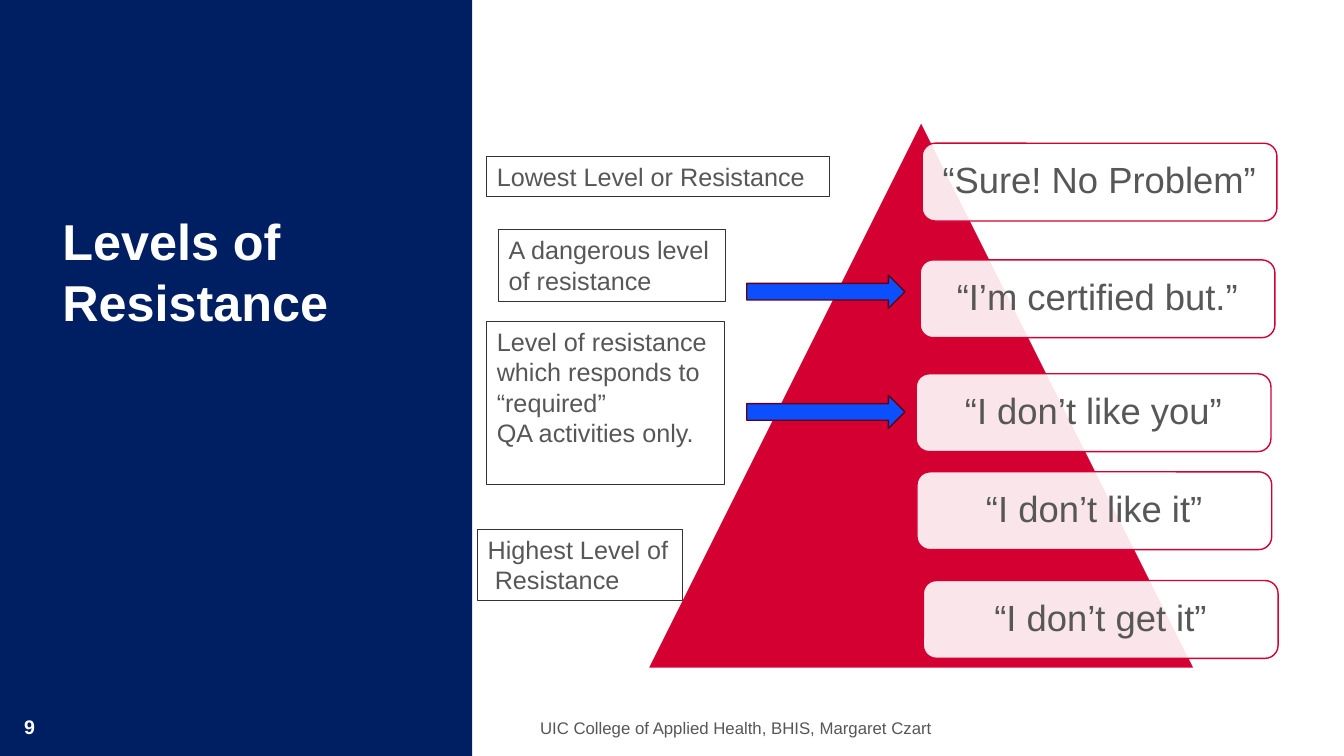
from dataclasses import dataclass

import pptx
import pptx.dml.color
import pptx.enum.shapes
import pptx.enum.text
import pptx.oxml
import pptx.oxml.ns
import pptx.util

Cm = pptx.util.Cm
Pt = pptx.util.Pt
RGBColor = pptx.dml.color.RGBColor
MSO_SHAPE = pptx.enum.shapes.MSO_SHAPE
PP_ALIGN = pptx.enum.text.PP_ALIGN
MSO_ANCHOR = pptx.enum.text.MSO_ANCHOR

NAVY = RGBColor(0x00, 0x1E, 0x62)
WHITE = RGBColor(0xFF, 0xFF, 0xFF)
RED = RGBColor(0xD4, 0x00, 0x32)
MAROON = RGBColor(0x5D, 0x00, 0x16)
BLUE = RGBColor(0x0C, 0x4F, 0xFF)
GREY = RGBColor(0x57, 0x57, 0x57)
CHARCOAL = RGBColor(0x32, 0x32, 0x32)
FONT = "Arial"


@dataclass(frozen=True)
class Box:
    left: float
    top: float
    width: float
    height: float

    def lengths(self) -> list[int]:
        return [Cm(v) for v in (self.left, self.top, self.width, self.height)]


@dataclass(frozen=True)
class Note:
    box: Box
    text: str
    last_indent: float = 0


@dataclass(frozen=True)
class Quote:
    left: float
    top: float
    text: str


NOTES = [
    Note(Box(12.27, 3.94, 8.64, 1.02), "Lowest Level or Resistance"),
    Note(Box(12.04, 13.34, 5.16, 1.8), "Highest Level of\nResistance", 0.18),
    Note(Box(12.57, 5.79, 5.72, 1.8), "A dangerous level\nof resistance"),
    Note(Box(12.27, 8.1, 5.99, 4.11),
         "Level of resistance which responds to “required”\nQA activities only."),
]
QUOTES = [
    Quote(23.24, 3.61, "“Sure! No Problem”"),
    Quote(23.19, 6.55, "“I’m certified but.”"),
    Quote(23.09, 9.42, "“I don’t like you”"),
    Quote(23.11, 11.89, "“I don’t like it”"),
    Quote(23.27, 14.63, "“I don’t get it”"),
]
ARROW_TOPS = [6.93, 9.96]


def add_shape(s, kind, box: Box, fill: RGBColor | None,
              line: RGBColor | None = None, width: float = 1):
    sp = s.shapes.add_shape(kind, *box.lengths())
    sp.shadow.inherit = False
    if fill is None:
        sp.fill.background()
    else:
        sp.fill.solid()
        sp.fill.fore_color.rgb = fill
    if line is None:
        sp.line.fill.background()
    else:
        sp.line.color.rgb = line
        sp.line.width = Pt(width)
    return sp


def set_text(sp, text: str, size: float, color: RGBColor, bold: bool = False,
             align=PP_ALIGN.LEFT, anchor=MSO_ANCHOR.TOP):
    tf = sp.text_frame
    tf.word_wrap = True
    tf.vertical_anchor = anchor
    tf.text = text
    for p in tf.paragraphs:
        p.alignment = align
        for r in p.runs:
            r.font.name = FONT
            r.font.size = Pt(size)
            r.font.bold = bold
            r.font.color.rgb = color
    return tf


def add_label(s, box: Box, text: str, size: float, color: RGBColor,
              bold: bool = False, anchor=MSO_ANCHOR.TOP):
    sp = s.shapes.add_textbox(*box.lengths())
    return set_text(sp, text, size, color, bold, anchor=anchor)


def add_note(s, note: Note) -> None:
    sp = add_shape(s, MSO_SHAPE.RECTANGLE, note.box, None, CHARCOAL, 0.75)
    tf = set_text(sp, note.text, 18, GREY)
    if note.last_indent:
        pPr = tf.paragraphs[-1]._p.get_or_add_pPr()
        pPr.set("marL", str(Cm(note.last_indent)))


def add_quote(s, quote: Quote) -> None:
    box = Box(quote.left, quote.top, 8.94, 1.96)
    sp = add_shape(s, MSO_SHAPE.ROUNDED_RECTANGLE, box, WHITE, RED)
    color = sp.fill._xPr.find(".//" + pptx.oxml.ns.qn("a:srgbClr"))
    alpha = pptx.oxml.parse_xml(
        f'<a:alpha {pptx.oxml.ns.nsdecls("a")} val="90000"/>')
    color.append(alpha)
    tf = set_text(sp, quote.text, 26, GREY, align=PP_ALIGN.CENTER,
                  anchor=MSO_ANCHOR.MIDDLE)
    tf.paragraphs[0].line_spacing = 0.9


def main() -> None:
    prs = pptx.Presentation()
    prs.slide_width, prs.slide_height = Cm(33.87), Cm(19.05)
    s = prs.slides.add_slide(prs.slide_layouts[6])

    add_shape(s, MSO_SHAPE.RECTANGLE, Box(0, 0, 11.9, 19.05), NAVY)
    add_label(s, Box(0.36, 17.88, 1.68, 0.86), "9", 14, WHITE, bold=True)
    title = add_label(s, Box(1.57, 5.3, 8.97, 4.34), "Levels of Resistance",
                      36, WHITE, bold=True)
    title.margin_left = title.margin_right = 0
    title.margin_top = title.margin_bottom = 0
    add_label(s, Box(13.36, 17.83, 11.43, 1.02),
              "UIC College of Applied Health, BHIS, Margaret Czart",
              12, GREY, anchor=MSO_ANCHOR.MIDDLE)

    add_shape(s, MSO_SHAPE.ISOSCELES_TRIANGLE,
              Box(16.33, 3.07, 13.77, 13.77), RED, WHITE)
    for quote in QUOTES:
        add_quote(s, quote)
    for note in NOTES:
        add_note(s, note)
    for top in ARROW_TOPS:
        add_shape(s, MSO_SHAPE.RIGHT_ARROW, Box(18.82, top, 3.99, 0.84),
                  BLUE, MAROON)

    prs.save("out.pptx")


if __name__ == "__main__":
    main()
